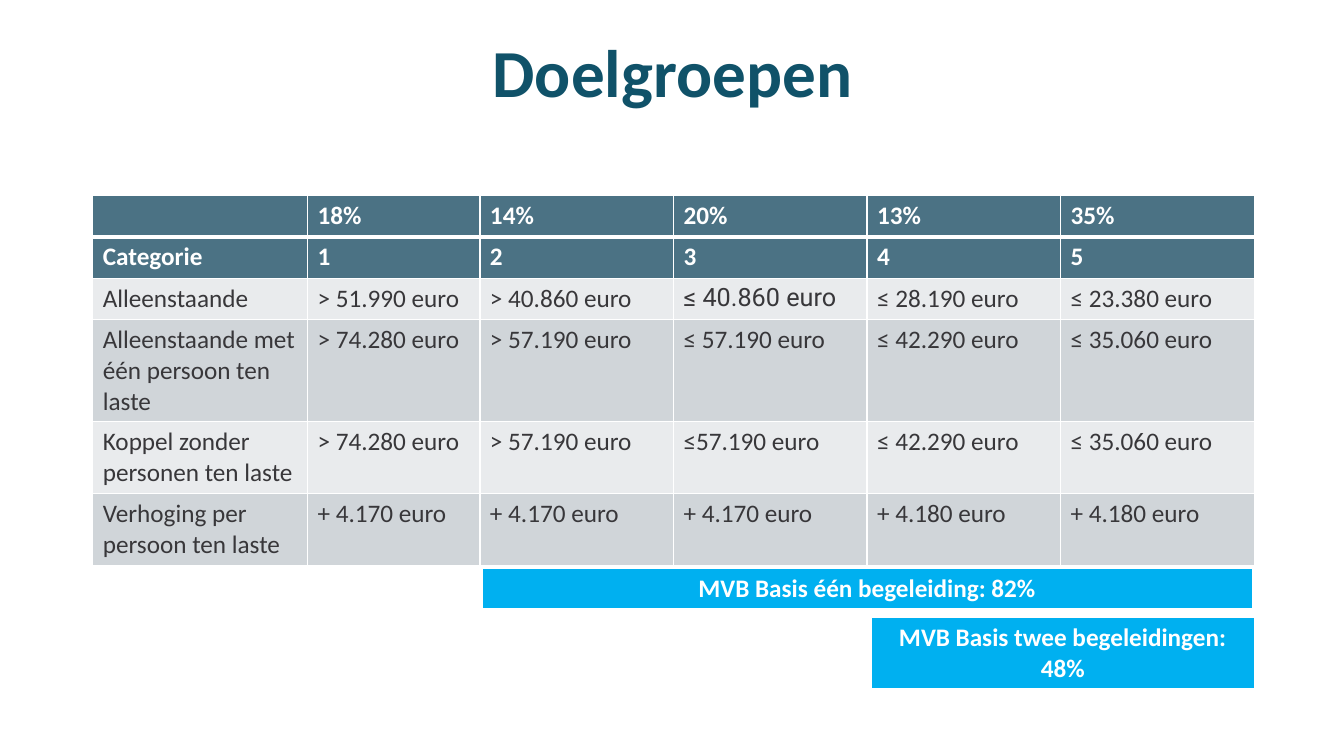
"""Builds the Doelgroepen slide with income categories and their shares."""
from lxml import etree
from pptx import Presentation
from pptx.dml.color import RGBColor
from pptx.enum import text as t
from pptx.oxml import ns
from pptx.util import Inches, Pt

WHITE = RGBColor(0xFF, 0xFF, 0xFF)
PETROL = RGBColor(0x10, 0x52, 0x69)
HEADER = RGBColor(0x4B, 0x72, 0x84)
LIGHT = RGBColor(0xE9, 0xEB, 0xED)
GREY = RGBColor(0xD0, 0xD5, 0xD9)
INK = RGBColor(0x38, 0x37, 0x3A)
BLUE = RGBColor(0x00, 0xB0, 0xF0)

COLUMN_WIDTHS = [2.13, 1.71] + [1.92] * 4
ROW_HEIGHTS = [0.41, 0.41, 0.41, 1.01, 0.71, 0.71]
CATEGORIES = [
    ["", "18%", "14%", "20%", "13%", "35%"],
    ["Categorie", "1", "2", "3", "4", "5"],
    ["Alleenstaande", "> 51.990 euro", "> 40.860 euro", "≤ 40.860 euro",
     "≤ 28.190 euro", "≤ 23.380 euro"],
    ["Alleenstaande met één persoon ten laste", "> 74.280 euro", "> 57.190 euro",
     "≤ 57.190 euro", "≤ 42.290 euro", "≤ 35.060 euro"],
    ["Koppel zonder personen ten laste", "> 74.280 euro", "> 57.190 euro",
     "≤57.190 euro", "≤ 42.290 euro", "≤ 35.060 euro"],
    ["Verhoging per persoon ten laste", "+ 4.170 euro", "+ 4.170 euro",
     "+ 4.170 euro", "+ 4.180 euro", "+ 4.180 euro"],
]


def write_text(frame, words, size=18, color=WHITE, bold=True, font="Calibri",
               align=t.PP_ALIGN.LEFT, spacing=None):
    """Write one formatted paragraph into a text frame."""
    para = frame.paragraphs[0]
    para.alignment = align
    para.line_spacing = spacing
    span = para.add_run()
    span.text = words
    span.font.name = font
    span.font.size = Pt(size)
    span.font.bold = bold
    span.font.color.rgb = color


def set_borders(cell, top=1, bottom=1):
    """Give a cell white borders of the given widths in points."""
    properties = cell._tc.get_or_add_tcPr()
    for side, width in (("L", 1), ("R", 1), ("T", top), ("B", bottom)):
        line = etree.SubElement(properties, ns.qn(f"a:ln{side}"), w=str(Pt(width)))
        fill = etree.SubElement(line, ns.qn("a:solidFill"))
        etree.SubElement(fill, ns.qn("a:srgbClr"), val=str(WHITE))


def fill_cell(cell, words, fill, top=1, bottom=1, **text_format):
    """Set the borders, fill and text of a cell."""
    set_borders(cell, top, bottom)
    cell.fill.solid()
    cell.fill.fore_color.rgb = fill
    if words:
        write_text(cell.text_frame, words, **text_format)


def add_grid(page, left, top, widths, heights):
    """Add a table with the given column widths and row heights."""
    table = page.shapes.add_table(
        len(heights), len(widths), Inches(left), Inches(top),
        Inches(sum(widths)), Inches(sum(heights))).table
    for column, width in zip(table.columns, widths):
        column.width = Inches(width)
    for row, height in zip(table.rows, heights):
        row.height = Inches(height)
    return table


def add_categories(page):
    """Add the table of income limits per category."""
    table = add_grid(page, 0.92, 1.94, COLUMN_WIDTHS, ROW_HEIGHTS)
    for row, values in enumerate(CATEGORIES):
        heading = row < 2
        fill = HEADER if heading else (LIGHT, GREY)[row % 2]
        for column, words in enumerate(values):
            fill_cell(table.cell(row, column), words, fill,
                      top=3 if row == 1 else 1, bottom=3 if row == 0 else 1,
                      color=WHITE if heading else INK, bold=heading,
                      font="Roboto" if (row, column) == (2, 3) else "Calibri")


def add_share_bar(page, words, left, top, width, height):
    """Add a one-cell blue table with a total share."""
    table = add_grid(page, left, top, [width], [height])
    fill_cell(table.cell(0, 0), words, BLUE, bottom=3, align=t.PP_ALIGN.CENTER)


def add_title(page, words):
    """Place and format the title."""
    title = page.shapes.title
    title.left, title.top = Inches(0.92), Inches(0.52)
    title.width, title.height = Inches(11.5), Inches(1.02)
    frame = title.text_frame
    frame.vertical_anchor = t.MSO_ANCHOR.TOP
    frame.auto_size = t.MSO_AUTO_SIZE.NONE
    write_text(frame, words, size=48, color=PETROL,
               align=t.PP_ALIGN.CENTER, spacing=Pt(38))


def main():
    """Build and save the deck."""
    deck = Presentation()
    deck.slide_width, deck.slide_height = Inches(13.33), Inches(7.5)
    page = deck.slides.add_slide(deck.slide_layouts[5])
    add_title(page, "Doelgroepen")
    add_categories(page)
    add_share_bar(page, "MVB Basis één begeleiding: 82%", 4.78, 5.64, 7.64, 0.41)
    add_share_bar(page, "MVB Basis twee begeleidingen: 48%", 8.64, 6.13, 3.8, 0.7)
    deck.save("out.pptx")


if __name__ == "__main__":
    main()
